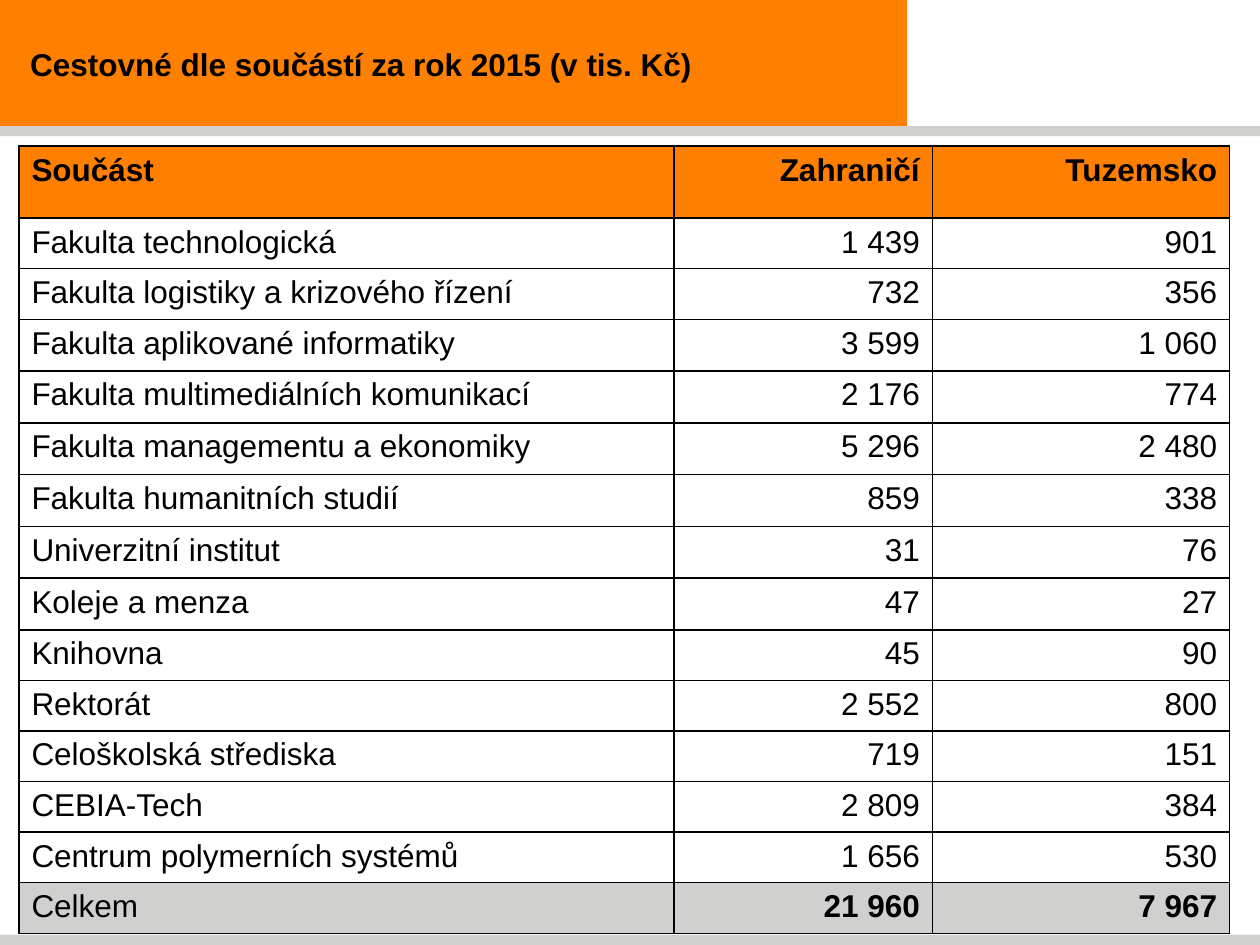
import pptx
import pptx.dml.color
import pptx.enum.shapes
import pptx.enum.text
import pptx.oxml
import pptx.oxml.ns
import pptx.util

ORANGE, GREY, BLACK = "FF8001", "D0D0CE", "000000"
LEFT = pptx.enum.text.PP_ALIGN.LEFT
RIGHT = pptx.enum.text.PP_ALIGN.RIGHT


def paint(fill, colour):
    fill.solid()
    fill.fore_color.rgb = pptx.dml.color.RGBColor.from_string(colour)


def write(frame, text, size=18, bold=False, align=LEFT, colour=BLACK):
    para = frame.paragraphs[0]
    para.alignment = align
    span = para.add_run()
    span.text = text
    span.font.name = "Arial"
    span.font.size = pptx.util.Pt(size)
    span.font.bold = bold
    paint(span.font.fill, colour)


deck = pptx.Presentation()
deck.slide_width = pptx.util.Inches(10)
deck.slide_height = pptx.util.Inches(7.5)
width, height = deck.slide_width, deck.slide_height
page = deck.slides.add_slide(deck.slide_layouts[6])

# Title band and the two grey rules, as shares of the slide
band_width, band_height = int(0.72 * width), int(height / 7.5)
rule_height = int(0.08 * band_height)
bars = [
    (0, band_width, band_height, ORANGE),
    (height - rule_height, width, rule_height, GREY),
    (band_height, width, rule_height, GREY),
]
for top, bar_width, bar_height, colour in bars:
    bar = page.shapes.add_shape(
        pptx.enum.shapes.MSO_SHAPE.RECTANGLE, 0, top, bar_width, bar_height)
    bar.shadow.inherit = False
    paint(bar.fill, colour)
    bar.line.fill.background()

title = page.shapes.add_textbox(0, 0, band_width, int(1.02 * band_height))
title.text_frame.word_wrap = True
title.text_frame.vertical_anchor = pptx.enum.text.MSO_ANCHOR.MIDDLE
title.text_frame.margin_left = int(0.024 * width)
write(title.text_frame, "Cestovné dle součástí za rok 2015 (v tis. Kč)", bold=True)

rows = [
    ("Součást", "Zahraničí", "Tuzemsko"),
    ("Fakulta technologická", "1 439", "901"),
    ("Fakulta logistiky a krizového řízení", "732", "356"),
    ("Fakulta aplikované informatiky", "3 599", "1 060"),
    ("Fakulta multimediálních komunikací", "2 176", "774"),
    ("Fakulta managementu a ekonomiky", "5 296", "2 480"),
    ("Fakulta humanitních studií", "859", "338"),
    ("Univerzitní institut", "31", "76"),
    ("Koleje a menza", "47", "27"),
    ("Knihovna", "45", "90"),
    ("Rektorát", "2 552", "800"),
    ("Celoškolská střediska", "719", "151"),
    ("CEBIA-Tech", "2 809", "384"),
    ("Centrum polymerních systémů", "1 656", "530"),
    ("Celkem", "21 960", "7 967"),
]
column_shares = [0.52, 0.205, 0.236]
row_weights = [57] + [40] * 2 + [41] * 6 + [40] * 6
table_width = int(sum(column_shares) * width)
table_height = int(6.25 * band_height)

table = page.shapes.add_table(
    len(rows), len(column_shares),
    int(0.015 * width), int(1.16 * band_height), table_width, table_height).table
table.first_row = False
table.horz_banding = False
for column, share in zip(table.columns, column_shares):
    column.width = int(share * width)
for row, weight in zip(table.rows, row_weights):
    row.height = int(table_height * weight / sum(row_weights))

row_fills = {0: ORANGE, len(rows) - 1: GREY}
for row_index, row in enumerate(rows):
    for column_index, text in enumerate(row):
        cell = table.cell(row_index, column_index)
        is_number = column_index > 0
        is_total = row_index == len(rows) - 1
        write(cell.text_frame, text, align=RIGHT if is_number else LEFT,
              bold=row_index == 0 or (is_total and is_number))
        for side in ("lnL", "lnR", "lnT", "lnB"):
            cell._tc.get_or_add_tcPr().append(pptx.oxml.parse_xml(
                f'<a:{side} {pptx.oxml.ns.nsdecls("a")} w="{pptx.util.Pt(1)}">'
                f'<a:solidFill><a:srgbClr val="{BLACK}"/></a:solidFill></a:{side}>'))
        if row_index in row_fills:
            paint(cell.fill, row_fills[row_index])
        else:
            cell.fill.background()

deck.save("out.pptx")
